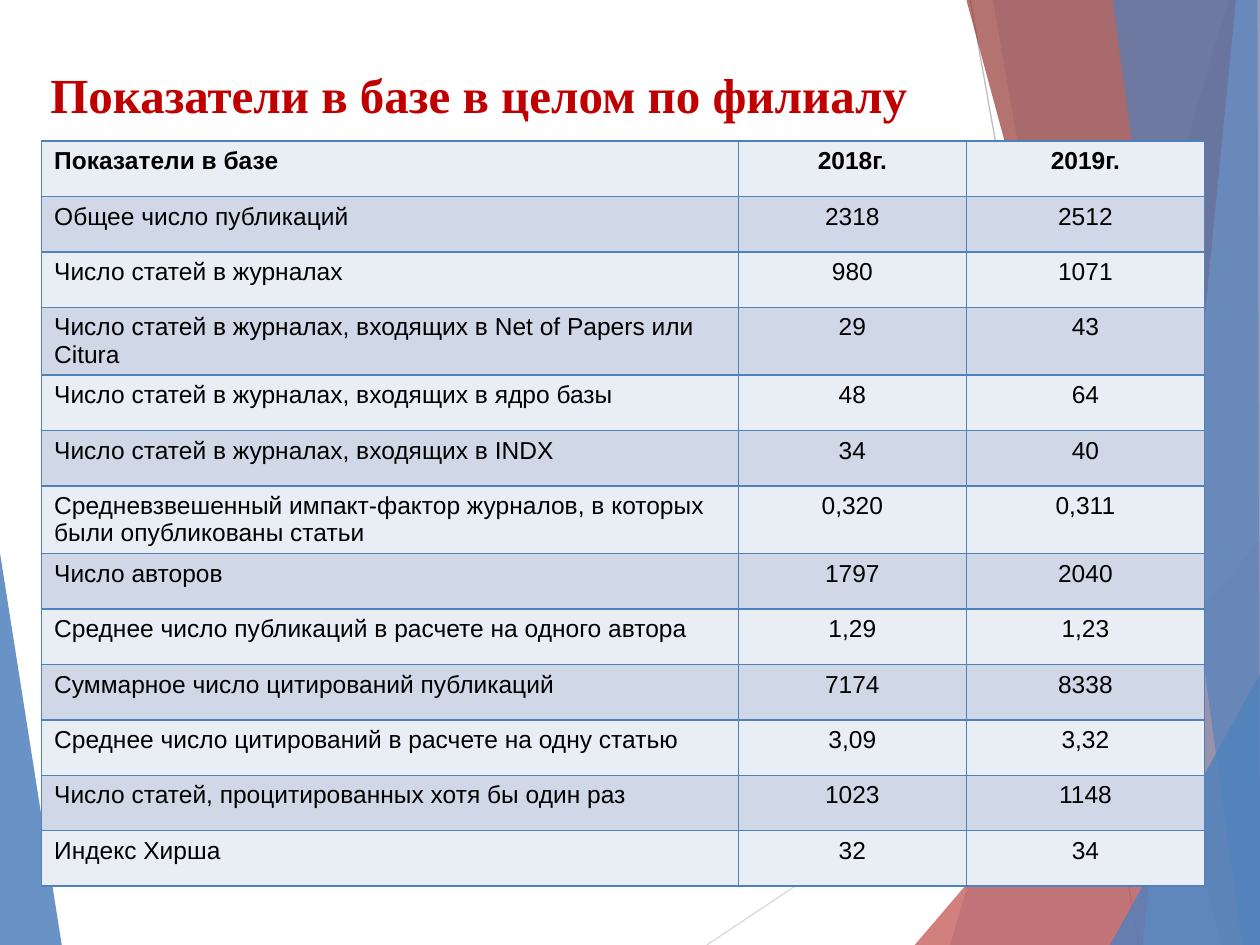
from lxml import etree
from pptx import Presentation
from pptx.dml.color import RGBColor
from pptx.enum.shapes import MSO_CONNECTOR
from pptx.enum.text import MSO_ANCHOR, MSO_AUTO_SIZE, PP_ALIGN
from pptx.oxml.ns import qn
from pptx.util import Inches, Pt

STRAIGHT = MSO_CONNECTOR.STRAIGHT
LEFT, CENTER = PP_ALIGN.LEFT, PP_ALIGN.CENTER
BOTTOM = MSO_ANCHOR.BOTTOM
NO_AUTOFIT = MSO_AUTO_SIZE.NONE

COLORS = {
    "blue": "4F81BD", "light_blue": "95B3D7", "red": "C0504D",
    "dark_red": "953735", "title": "C00000", "text": "000000",
    "band_light": "E9EDF4", "band_dark": "D0D8E8",
    "pale_gray": "D9D9D9", "gray": "BFBFBF",
}
WIDTH, HEIGHT = 10, 7.5

RAYS = [
    ((5.61, 7.5), (10, 4.57), "pale_gray"),
    ((7.7, 0), (9.04, 7.5), "gray"),
]
FACETS = [
    ([(0, 4.39), (0.49, 7.5), (0, 7.5)], "blue", 85),
    ([(9.75, 0), (7.54, 7.5), (10, 7.5), (10, 0)], "blue", 30),
    ([(7.88, 0), (9.19, 7.5), (10, 7.5), (10, 0)], "blue", 20),
    ([(7.26, 7.5), (10, 4.29), (10, 7.5)], "red", 72),
    ([(7.67, 0), (9.7, 7.5), (10, 7.5), (10, 0)], "dark_red", 70),
    ([(9.81, 0), (9.07, 7.5), (10, 7.5), (10, 0)], "light_blue", 70),
    ([(8.83, 0), (9.86, 7.5), (10, 7.5), (9.98, 0)], "blue", 65),
    ([(8.81, 7.5), (10, 5.35), (10, 7.5)], "blue", 80),
]
TITLE = "Показатели в базе в целом по филиалу"
ROWS = [
    ("Показатели в базе", "2018г.", "2019г."),
    ("Общее число публикаций", "2318", "2512"),
    ("Число статей в журналах", "980", "1071"),
    ("Число статей в журналах, входящих в Net of Papers или Citura", "29", "43"),
    ("Число статей в журналах, входящих в ядро базы", "48", "64"),
    ("Число статей в журналах, входящих в INDX", "34", "40"),
    ("Средневзвешенный импакт-фактор журналов, в которых были опубликованы статьи",
     "0,320", "0,311"),
    ("Число авторов", "1797", "2040"),
    ("Среднее число публикаций в расчете на одного автора", "1,29", "1,23"),
    ("Суммарное число цитирований публикаций", "7174", "8338"),
    ("Среднее число цитирований в расчете на одну статью", "3,09", "3,32"),
    ("Число статей, процитированных хотя бы один раз", "1023", "1148"),
    ("Индекс Хирша", "32", "34"),
]
COL_WIDTHS = [5.53, 1.81, 1.89]
ROW_HEIGHT = 0.44


def rgb(name):
    return RGBColor.from_string(COLORS[name])


def format_runs(p, font, size, color, bold):
    for r in p.runs:
        r.font.name = font
        r.font.size = Pt(size)
        r.font.bold = bold
        r.font.color.rgb = rgb(color)


def add_ray(s, start, end, color):
    line = s.shapes.add_connector(STRAIGHT, *map(Inches, start + end))
    line.line.color.rgb = rgb(color)
    line.line.width = Pt(0.75)
    etree.SubElement(line.element.spPr, qn("a:effectLst"))


def add_facet(s, points, color, opacity):
    corners = [(Inches(x), Inches(y)) for x, y in points]
    builder = s.shapes.build_freeform(*corners[0])
    builder.add_line_segments(corners[1:], close=True)
    sp = builder.convert_to_shape()
    sp.shadow.inherit = False
    sp.line.fill.background()
    sp.fill.solid()
    sp.fill.fore_color.rgb = rgb(color)
    clr = sp.element.spPr.find(qn("a:solidFill"))[0]
    etree.SubElement(clr, qn("a:alpha"), val=str(opacity * 1000))


def add_backdrop(s):
    first, *rest = FACETS
    add_facet(s, *first)
    for ray in RAYS:
        add_ray(s, *ray)
    for facet in rest:
        add_facet(s, *facet)


def place_title(s, left, top, width, height):
    title = s.shapes.title
    s.shapes.element.append(title.element)
    title.left, title.top = Inches(left), Inches(top)
    title.width, title.height = Inches(width), Inches(height)
    tf = title.text_frame
    tf.text = TITLE
    tf.word_wrap = True
    tf.auto_size = NO_AUTOFIT
    tf.vertical_anchor = BOTTOM
    tf.margin_bottom = Inches(0.02)
    p = tf.paragraphs[0]
    p.alignment = LEFT
    format_runs(p, "Times New Roman", 28, "title", True)


def set_borders(cell):
    tcPr = cell._tc.get_or_add_tcPr()
    for i, side in enumerate(("lnL", "lnR", "lnT", "lnB")):
        ln = etree.Element(qn(f"a:{side}"), w=str(Pt(1)))
        fill = etree.SubElement(ln, qn("a:solidFill"))
        etree.SubElement(fill, qn("a:srgbClr"), val=COLORS["blue"])
        tcPr.insert(i, ln)


def add_indicators(s, left, top, width):
    frame = s.shapes.add_table(len(ROWS), len(COL_WIDTHS), Inches(left), Inches(top),
                               Inches(width), Inches(ROW_HEIGHT * len(ROWS)))
    table = frame.table
    for column, col_width in zip(table.columns, COL_WIDTHS):
        column.width = Inches(col_width)
    for i, values in enumerate(ROWS):
        table.rows[i].height = Inches(ROW_HEIGHT)
        for j, value in enumerate(values):
            cell = table.cell(i, j)
            cell.fill.solid()
            cell.fill.fore_color.rgb = rgb("band_dark" if i % 2 else "band_light")
            set_borders(cell)
            cell.text_frame.text = value
            p = cell.text_frame.paragraphs[0]
            p.alignment = CENTER if j else LEFT
            format_runs(p, "Arial", 14, "text", i == 0)


def main():
    prs = Presentation()
    prs.slide_width, prs.slide_height = Inches(WIDTH), Inches(HEIGHT)
    s = prs.slides.add_slide(prs.slide_layouts[5])
    add_backdrop(s)
    place_title(s, 0.3, 0.44, 8.66, 0.56)
    add_indicators(s, 0.33, 1.12, sum(COL_WIDTHS))
    prs.save("out.pptx")


if __name__ == "__main__":
    main()
